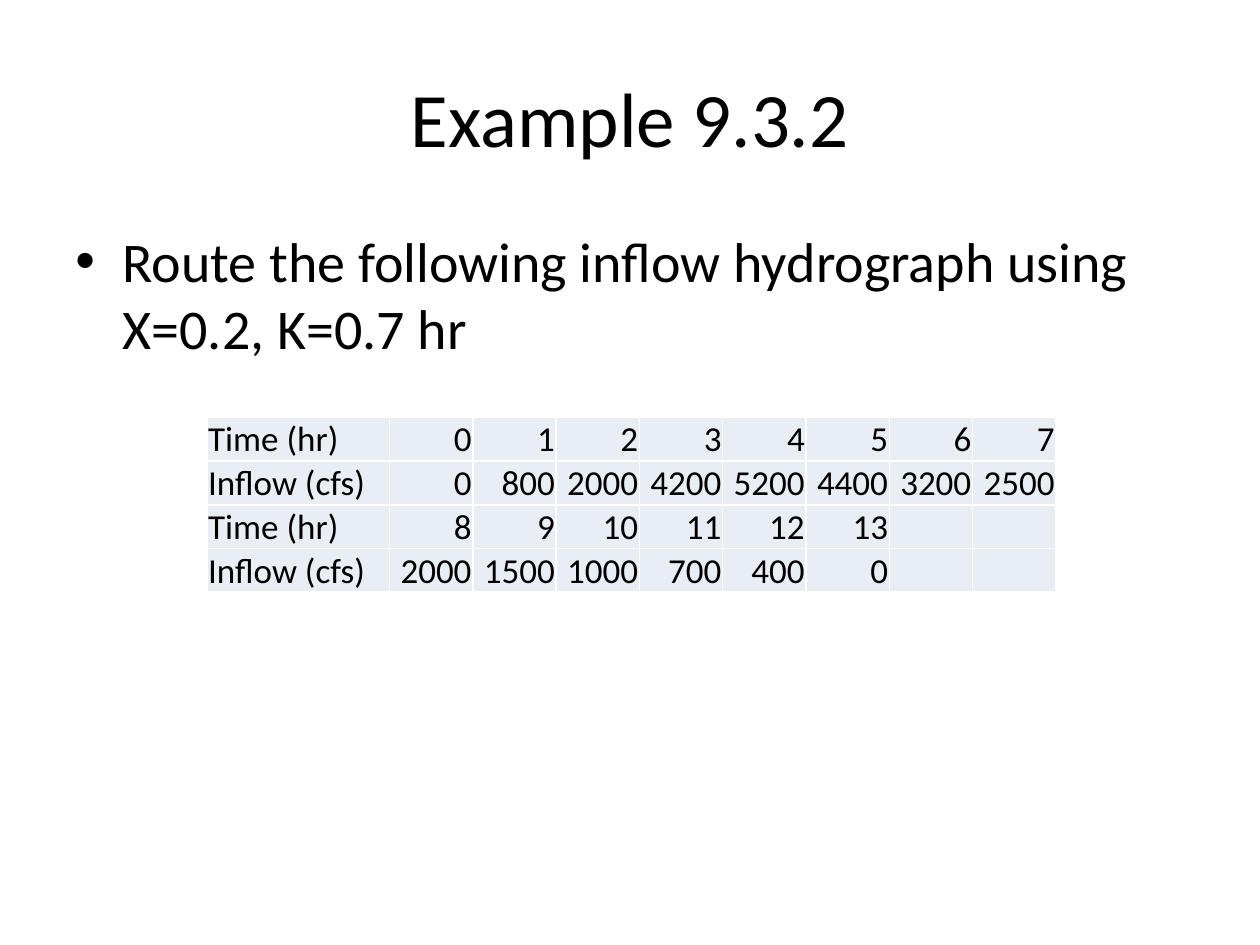
from dataclasses import dataclass

from lxml.etree import SubElement
from pptx import Presentation
from pptx.dml.color import RGBColor
from pptx.enum.text import MSO_ANCHOR, PP_ALIGN
from pptx.oxml.ns import qn
from pptx.util import Pt


@dataclass(frozen=True)
class Theme:
    font: str = "Calibri"
    ink: str = "000000"
    cell: str = "E9EDF4"
    rule: str = "FFFFFF"
    title_size: int = 44
    body_size: int = 32
    table_size: int = 20


THEME = Theme()
MARGIN, CONTENT_WIDTH = 36, 648
LABEL_WIDTH, VALUE_WIDTH, ROW_HEIGHT = 104.4, 47.6, 25
TIME, INFLOW = "Time (hr)", "Inﬂow (cfs)"
HYDROGRAPH = [
    [TIME, 0, 1, 2, 3, 4, 5, 6, 7],
    [INFLOW, 0, 800, 2000, 4200, 5200, 4400, 3200, 2500],
    [TIME, 8, 9, 10, 11, 12, 13],
    [INFLOW, 2000, 1500, 1000, 700, 400, 0],
]


def add_run(paragraph, text, size):
    run = paragraph.add_run()
    run.text = text
    run.font.name = THEME.font
    run.font.size = Pt(size)
    run.font.color.rgb = RGBColor.from_string(THEME.ink)


def set_title(slide, text):
    title = slide.shapes.title
    title.left, title.top = Pt(MARGIN), Pt(21.6)
    title.width, title.height = Pt(CONTENT_WIDTH), Pt(90)
    title.text_frame.vertical_anchor = MSO_ANCHOR.MIDDLE
    paragraph = title.text_frame.paragraphs[0]
    paragraph.alignment = PP_ALIGN.CENTER
    add_run(paragraph, text, THEME.title_size)


def add_bullet(slide, text):
    body = slide.shapes.add_textbox(Pt(MARGIN), Pt(126), Pt(CONTENT_WIDTH), Pt(356.4))
    body.text_frame.word_wrap = True
    paragraph = body.text_frame.paragraphs[0]
    paragraph.space_before = Pt(6.4)
    add_run(paragraph, text, THEME.body_size)
    properties = paragraph._p.get_or_add_pPr()
    properties.set("marL", str(Pt(27)))
    properties.set("indent", str(-Pt(27)))
    SubElement(properties, qn("a:buFont"), typeface="Arial")
    SubElement(properties, qn("a:buChar"), char="•")


def style_cell(cell):
    cell.margin_left = cell.margin_top = cell.margin_right = Pt(0.72)
    cell.margin_bottom = Pt(0)
    cell.vertical_anchor = MSO_ANCHOR.BOTTOM
    properties = cell._tc.get_or_add_tcPr()
    for side in ("a:lnL", "a:lnR", "a:lnT", "a:lnB"):
        line = SubElement(properties, qn(side), w=str(Pt(1)))
        SubElement(SubElement(line, qn("a:solidFill")), qn("a:srgbClr"), val=THEME.rule)
    cell.fill.solid()
    cell.fill.fore_color.rgb = RGBColor.from_string(THEME.cell)


def add_hydrograph(slide, rows):
    column_count = max(len(row) for row in rows)
    widths = [LABEL_WIDTH] + [VALUE_WIDTH] * (column_count - 1)
    table = slide.shapes.add_table(
        len(rows), column_count, Pt(118.2), Pt(238.5),
        Pt(sum(widths)), Pt(ROW_HEIGHT * len(rows)),
    ).table
    table.first_row = table.horz_banding = False
    for column, width in zip(table.columns, widths):
        column.width = Pt(width)
    for table_row, values in zip(table.rows, rows):
        table_row.height = Pt(ROW_HEIGHT)
        for cell in table_row.cells:
            style_cell(cell)
        for cell, value in zip(table_row.cells, values):
            paragraph = cell.text_frame.paragraphs[0]
            is_label = isinstance(value, str)
            paragraph.alignment = PP_ALIGN.LEFT if is_label else PP_ALIGN.RIGHT
            add_run(paragraph, str(value), THEME.table_size)


def main():
    deck = Presentation()
    deck.slide_width, deck.slide_height = Pt(720), Pt(540)
    slide = deck.slides.add_slide(deck.slide_layouts.get_by_name("Title Only"))
    set_title(slide, "Example 9.3.2")
    add_bullet(slide, "Route the following inflow hydrograph using X=0.2, K=0.7 hr")
    add_hydrograph(slide, HYDROGRAPH)
    deck.save("out.pptx")


if __name__ == "__main__":
    main()
